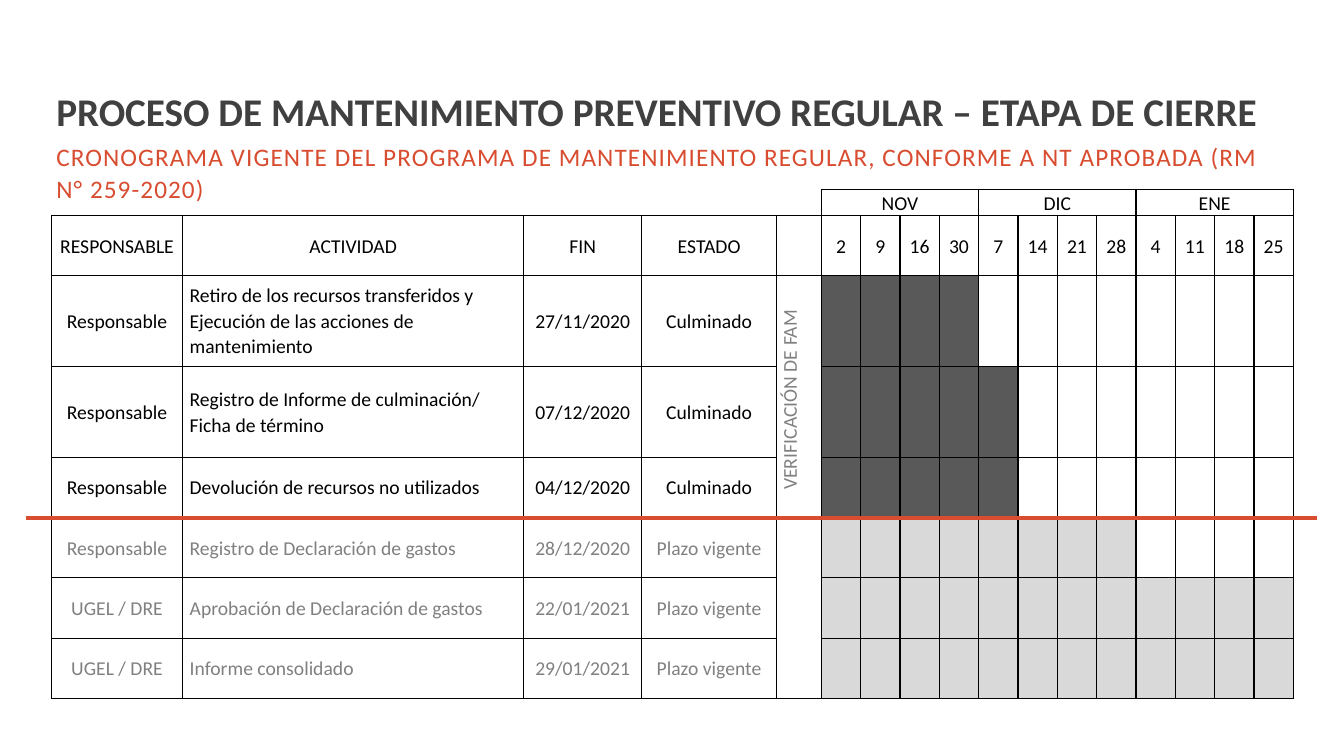
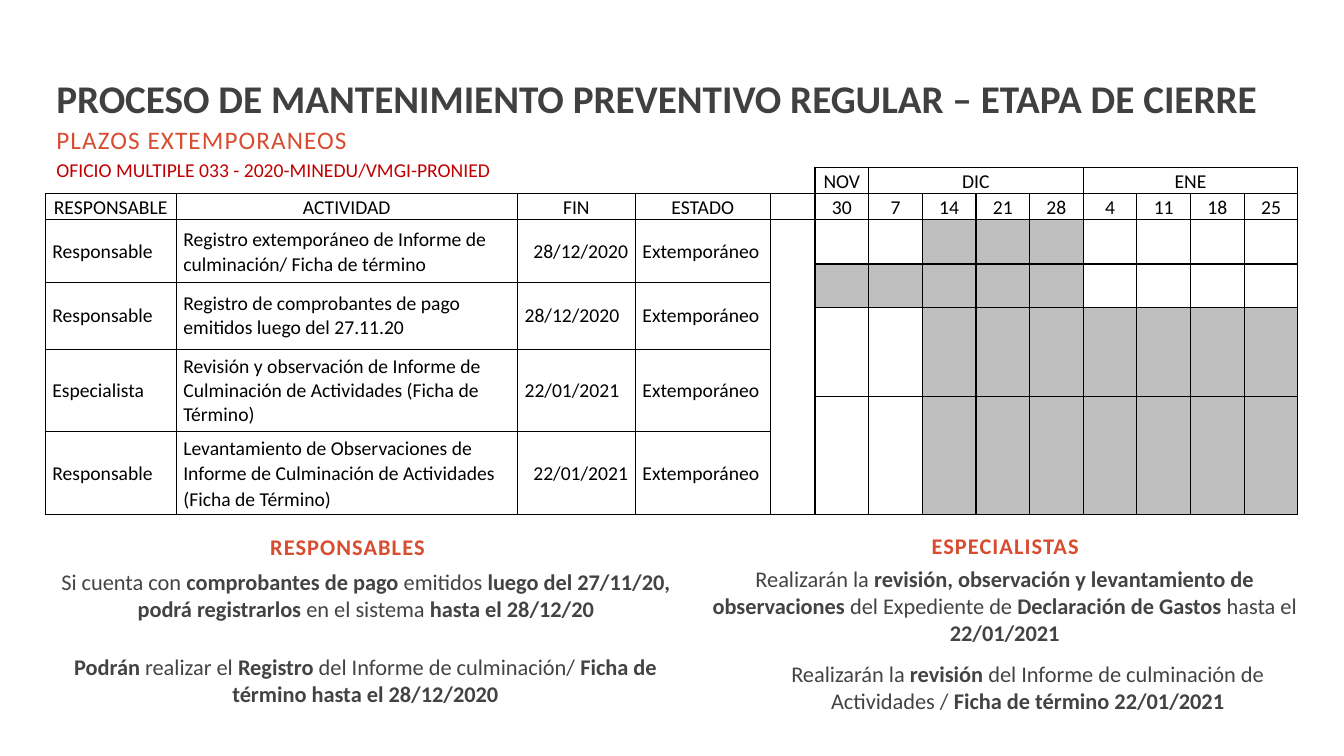
"""Builds two slides with the closing-stage schedules of a maintenance programme."""
import pptx
import pptx.dml.color
import pptx.enum.shapes
import pptx.enum.text
import pptx.oxml
import pptx.oxml.ns
import pptx.util

Cm = pptx.util.Cm
Pt = pptx.util.Pt
RGBColor = pptx.dml.color.RGBColor
ALIGN = pptx.enum.text.PP_ALIGN
ANCHOR = pptx.enum.text.MSO_ANCHOR

BLACK = RGBColor(0x00, 0x00, 0x00)
TITLE_GRAY = RGBColor(0x40, 0x40, 0x40)
BODY_GRAY = RGBColor(0x43, 0x43, 0x43)
PENDING_GRAY = RGBColor(0x80, 0x80, 0x80)
DONE_FILL = RGBColor(0x59, 0x59, 0x59)
PENDING_FILL = RGBColor(0xD9, 0xD9, 0xD9)
LATE_FILL = RGBColor(0xBF, 0xBF, 0xBF)
ORANGE = RGBColor(0xD8, 0x4C, 0x30)
RED = RGBColor(0xC0, 0x00, 0x00)

FONT = "Calibri"
TITLE = "PROCESO DE MANTENIMIENTO PREVENTIVO REGULAR – ETAPA DE CIERRE"
LABELS = ["RESPONSABLE", "ACTIVIDAD", "FIN", "ESTADO"]
LABEL_WIDTHS = [3.3, 8.6, 2.97, 3.4, 1.13]
FIRST_DAY = len(LABEL_WIDTHS)
GAP_COL = FIRST_DAY - 1


def style(p, size, color, bold=None, align=ALIGN.LEFT, spacing=1.0):
    """Set the font and layout of a paragraph."""
    p.alignment = align
    p.line_spacing = spacing
    p.font.name = FONT
    p.font.size = Pt(size)
    p.font.color.rgb = color
    p.font.bold = bold


def text_box(slide, box, anchor=ANCHOR.TOP):
    """Add a wrapping text box and return its text frame."""
    tf = slide.shapes.add_textbox(*(Cm(v) for v in box)).text_frame
    tf.word_wrap = True
    tf.vertical_anchor = anchor
    return tf


def track(p):
    """Widen the letter spacing of a paragraph."""
    for r in p.runs:
        r._r.get_or_add_rPr().set("spc", "80")


def title(slide, box):
    """Add the slide title."""
    p = text_box(slide, box, ANCHOR.BOTTOM).paragraphs[0]
    p.text = TITLE
    style(p, 28, TITLE_GRAY, True, spacing=0.9)


def heading(slide, box, text, size=18, bold=None, align=ALIGN.LEFT):
    """Add an orange tracked heading and return its text frame."""
    tf = text_box(slide, box)
    p = tf.paragraphs[0]
    p.text = text
    style(p, size, ORANGE, bold, align, 1.07)
    track(p)
    return tf


def note(slide, box, text):
    """Add a centred note whose parts between asterisks are bold."""
    p = text_box(slide, box).paragraphs[0]
    for i, part in enumerate(text.split("*")):
        if part:
            r = p.add_run()
            r.text = part
            r.font.bold = i % 2 == 1
    style(p, 16, BODY_GRAY, align=ALIGN.CENTER)


def borders(cell, sides):
    """Draw black borders on the given sides and none on the others."""
    tcPr = cell._tc.get_or_add_tcPr()
    ns = pptx.oxml.ns.nsdecls("a")
    for side in "LRTB":
        paint = '<a:solidFill><a:srgbClr val="000000"/></a:solidFill>' if side in sides else "<a:noFill/>"
        tcPr.append(pptx.oxml.parse_xml(f'<a:ln{side} {ns} w="12700">{paint}</a:ln{side}>'))


def write(cell, text, align=ALIGN.CENTER, color=BLACK, spacing=1.07):
    """Write one paragraph in a table cell."""
    p = cell.text_frame.paragraphs[0]
    p.text = text
    style(p, 14, color, align=align, spacing=spacing)


def blank_table(slide, left, top, widths, heights):
    """Add an unfilled, bordered table with an open top-left corner."""
    frame = slide.shapes.add_table(len(heights), len(widths), Cm(left), Cm(top),
                                   Cm(sum(widths)), Cm(sum(heights)))
    table = frame.table
    table.first_row = table.horz_banding = False
    for col, width in zip(table.columns, widths):
        col.width = Cm(width)
    for row, height in zip(table.rows, heights):
        row.height = Cm(height)
    for i in range(len(heights)):
        for j in range(len(widths)):
            cell = table.cell(i, j)
            cell.margin_left = cell.margin_right = Cm(0.18)
            cell.margin_top = cell.margin_bottom = 0
            cell.vertical_anchor = ANCHOR.MIDDLE
            borders(cell, "RB" if i == 0 and j < FIRST_DAY else "LRTB")
            cell.fill.background()
            style(cell.text_frame.paragraphs[0], 8, BLACK)
    return table


def merge(table, row, col, rows, cols):
    """Merge a block of cells if it holds more than one, and return its origin."""
    cell = table.cell(row, col)
    if rows * cols > 1:
        cell.merge(table.cell(row + rows - 1, col + cols - 1))
    return cell


def schedule(slide, left, top, days_width, heights, months, tasks, bars):
    """Add a schedule table: months and days above, tasks at left, bars at right."""
    days = [day for _, month_days in months for day in month_days]
    widths = LABEL_WIDTHS + [days_width / len(days)] * len(days)
    table = blank_table(slide, left, top, widths, heights)
    merge(table, 0, 0, 1, FIRST_DAY)
    col = FIRST_DAY
    for name, month_days in months:
        write(merge(table, 0, col, 1, len(month_days)), name)
        col += len(month_days)
    for j, text in enumerate(LABELS + [""] + days):
        if text:
            write(table.cell(1, j), text)
    row = 2
    for span, texts, aligns, color, spacing in tasks:
        for j, (text, align) in enumerate(zip(texts, aligns)):
            write(merge(table, row, j, span, 1), text, align, color, spacing)
        row += span
    row = 2
    for span, first, last, color in bars:
        for j in range(len(days)):
            cell = merge(table, row, FIRST_DAY + j, span, 1)
            if first <= j <= last:
                cell.fill.solid()
                cell.fill.fore_color.rgb = color
        row += span
    merge(table, 2, GAP_COL, len(heights) - 2, 1)
    return table


def current_slide(prs):
    """Build the slide with the schedule in force."""
    slide = prs.slides.add_slide(prs.slide_layouts[6])
    aligns = [ALIGN.CENTER, ALIGN.LEFT, ALIGN.CENTER, ALIGN.CENTER]
    done = [
        ("Responsable", "Retiro de los recursos transferidos y Ejecución de las acciones de mantenimiento",
         "27/11/2020", "Culminado"),
        ("Responsable", "Registro de Informe de culminación/ Ficha de término", "07/12/2020", "Culminado"),
        ("Responsable", "Devolución de recursos no utilizados", "04/12/2020", "Culminado"),
    ]
    pending = [
        ("Responsable", "Registro de Declaración de gastos", "28/12/2020", "Plazo vigente"),
        ("UGEL / DRE", "Aprobación de Declaración de gastos", "22/01/2021", "Plazo vigente"),
        ("UGEL / DRE", "Informe consolidado", "29/01/2021", "Plazo vigente"),
    ]
    tasks = [(1, texts, aligns, color, 1.07)
             for group, color in ((done, BLACK), (pending, PENDING_GRAY)) for texts in group]
    bars = [(1, 0, last, DONE_FILL) for last in (3, 4, 4)]
    bars += [(1, 0, last, PENDING_FILL) for last in (7, 11, 11)]
    months = [("NOV", ["2", "9", "16", "30"]), ("DIC", ["7", "14", "21", "28"]),
              ("ENE", ["4", "11", "18", "25"])]
    heights = [0.65, 1.51, 2.29, 2.29] + [1.52] * 4
    table = schedule(slide, 1.3, 4.78, 11.9, heights, months, tasks, bars)

    cell = table.cell(2, GAP_COL)
    write(cell, "VERIFICACIÓN DE FAM", ALIGN.LEFT, PENDING_GRAY)
    cell._tc.get_or_add_tcPr().set("vert", "vert270")
    cell.text_frame.paragraphs[0]._p.get_or_add_pPr().set("marL", str(Cm(5.08)))

    line = slide.shapes.add_connector(pptx.enum.shapes.MSO_CONNECTOR.STRAIGHT,
                                      Cm(0.66), Cm(13.06), Cm(33.2), Cm(13.06))
    line.line.color.rgb = ORANGE
    line.line.width = Pt(3)
    line._element.spPr.append(pptx.oxml.parse_xml(f'<a:effectLst {pptx.oxml.ns.nsdecls("a")}/>'))

    title(slide, (1.17, 2.08, 31.42, 1.45))
    heading(slide, (1.17, 3.38, 31.29, 1.85),
            "CRONOGRAMA VIGENTE DEL PROGRAMA DE MANTENIMIENTO REGULAR, CONFORME A NT APROBADA (RM N° 259-2020)")


def late_slide(prs):
    """Build the slide with the extended deadlines."""
    slide = prs.slides.add_slide(prs.slide_layouts[6])
    title(slide, (1.17, 2.16, 31.55, 1.04))
    p = heading(slide, (1.17, 2.95, 30.73, 1.73), "PLAZOS EXTEMPORANEOS").add_paragraph()
    p.text = "OFICIO MULTIPLE 033 - 2020-MINEDU/VMGI-PRONIED"
    style(p, 14, RED, spacing=1.07)
    p.space_before = Pt(1.2)

    left = [ALIGN.LEFT] * 4
    right_date = [ALIGN.LEFT, ALIGN.LEFT, ALIGN.RIGHT, ALIGN.LEFT]
    tasks = [
        (2, ("Responsable", "Registro extemporáneo de Informe de culminación/ Ficha de término",
             "28/12/2020", "Extemporáneo"), right_date, BLACK, 1.07),
        (2, ("Responsable", "Registro de comprobantes de pago emitidos luego del 27.11.20",
             "28/12/2020", "Extemporáneo"), left, BLACK, 1.0),
        (2, ("Especialista", "Revisión y observación de Informe de Culminación de Actividades (Ficha de Término)",
             "22/01/2021", "Extemporáneo"), left, BLACK, 1.0),
        (1, ("Responsable",
             "Levantamiento de Observaciones de Informe de Culminación de Actividades (Ficha de Término)",
             "22/01/2021", "Extemporáneo"), right_date, BLACK, 1.07),
    ]
    bars = [(1, 2, 4, LATE_FILL), (2, 0, 4, LATE_FILL), (2, 2, 8, LATE_FILL), (2, 2, 8, LATE_FILL)]
    months = [("NOV", ["30"]), ("DIC", ["7", "14", "21", "28"]), ("ENE", ["4", "11", "18", "25"])]
    heights = [0.66, 0.66, 1.11, 0.47, 0.63, 1.05, 1.19, 0.89, 2.08]
    schedule(slide, 1.14, 4.22, 12.17, heights, months, tasks, bars)

    heading(slide, (6.22, 13.26, 5.08, 0.99), "RESPONSABLES", 16, True, ALIGN.CENTER)
    heading(slide, (23.01, 13.23, 4.65, 0.97), "ESPECIALISTAS", 16, True, ALIGN.CENTER)
    note(slide, (1.22, 14.2, 16, 1.63),
         "Si cuenta con *comprobantes de pago *emitidos *luego del 27/11/20, podrá registrarlos* "
         "en el sistema *hasta el 28/12/20*")
    note(slide, (1.5, 16.33, 15.42, 1.63),
         "*Podrán* realizar el *Registro* del Informe de culminación/ *Ficha de término hasta el 28/12/2020*")
    note(slide, (17.32, 14.12, 16, 2.31),
         "Realizarán la *revisión, observación y levantamiento de observaciones *del Expediente de "
         "*Declaración de Gastos* hasta el *22/01/2021*")
    note(slide, (18.47, 16.51, 14.86, 1.63),
         "Realizarán la *revisión *del Informe de culminación de Actividades / *Ficha de término 22/01/2021*")


def main():
    """Build and save the presentation."""
    prs = pptx.Presentation()
    prs.slide_width = Cm(33.87)
    prs.slide_height = Cm(19.05)
    current_slide(prs)
    late_slide(prs)
    prs.save("out.pptx")


if __name__ == "__main__":
    main()
